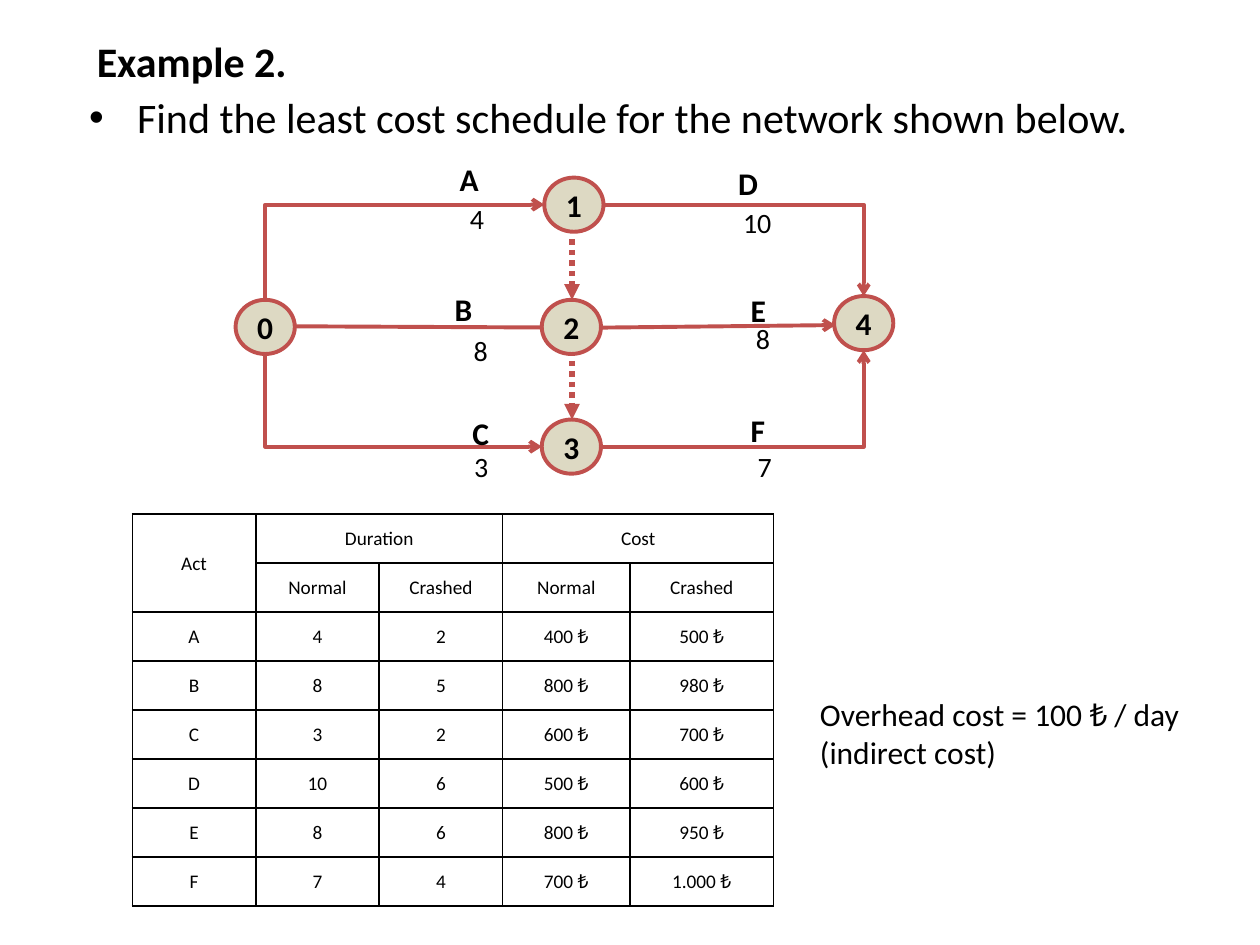
from dataclasses import dataclass

from lxml.etree import SubElement
from pptx import Presentation
from pptx.dml.color import RGBColor
from pptx.enum.dml import MSO_LINE
from pptx.enum.shapes import MSO_CONNECTOR as Link, MSO_SHAPE as Preset
from pptx.enum.text import MSO_ANCHOR as Anchor, PP_ALIGN as Align
from pptx.oxml.ns import qn
from pptx.util import Inches, Pt


@dataclass(frozen=True)
class Theme:
    font: str = "Calibri"
    ink: str = "000000"
    accent: str = "C0504D"
    node_fill: str = "DDD9C3"
    heading: int = 24
    label: int = 18
    duration: int = 16
    cell: int = 11
    solid: float = 2.25
    dotted: float = 3
    border: float = 1


@dataclass(frozen=True)
class Node:
    name: str
    left: float
    top: float


@dataclass(frozen=True)
class Activity:
    name: str
    duration: int
    crashed: int
    cost: str
    crashed_cost: str
    name_at: tuple[float, float]
    duration_at: tuple[float, float, float]  # left, top, width


@dataclass(frozen=True)
class Arrow:
    start: tuple[float, float]
    end: tuple[float, float]
    dotted: bool = False


@dataclass(frozen=True)
class Bend:
    """An arrow with one corner, between two sites on node outlines."""
    source: str
    source_site: int
    target: str
    target_site: int
    vertical_first: bool = False


THEME = Theme()
NODE_W, NODE_H = 0.47, 0.43
TOP, LEFT, BOTTOM, RIGHT = 0, 2, 4, 6  # connection sites of an ellipse
SITE_OFFSET = {TOP: (NODE_W / 2, 0), LEFT: (0, NODE_H / 2),
               BOTTOM: (NODE_W / 2, NODE_H), RIGHT: (NODE_W, NODE_H / 2)}

NODES = {n.name: n for n in (
    Node("0", 1.87, 2.38), Node("1", 4.32, 1.41), Node("2", 4.3, 2.38),
    Node("3", 4.3, 3.33), Node("4", 6.62, 2.35))}
ACTIVITIES = (
    Activity("A", 4, 2, "400 ₺", "500 ₺", (3.55, 1.22), (3.39, 1.55, 0.79)),
    Activity("B", 8, 5, "800 ₺", "980 ₺", (3.51, 2.25), (3.45, 2.6, 0.73)),
    Activity("C", 3, 2, "600 ₺", "700 ₺", (3.65, 3.24), (3.38, 3.52, 0.88)),
    Activity("D", 10, 6, "500 ₺", "600 ₺", (5.76, 1.25), (5.63, 1.58, 0.76)),
    Activity("E", 8, 6, "800 ₺", "950 ₺", (5.86, 2.26), (5.66, 2.5, 0.79)),
    Activity("F", 7, 4, "700 ₺", "1.000 ₺", (5.86, 3.21), (5.63, 3.52, 0.88)))
ARROWS = (
    Arrow((2.35, 2.59), (4.54, 2.6)), Arrow((4.78, 2.6), (6.63, 2.58)),
    Arrow((4.54, 1.9), (4.54, 2.38), True), Arrow((4.54, 2.78), (4.54, 3.33), True))
BENDS = (
    Bend("0", TOP, "1", LEFT, True), Bend("0", BOTTOM, "3", LEFT, True),
    Bend("1", RIGHT, "4", TOP), Bend("3", RIGHT, "4", BOTTOM))


def color(value: str) -> RGBColor:
    return RGBColor.from_string(value)


def write(frame, text: str, *, size: float, bold: bool = False, align=Align.LEFT) -> None:
    frame.text = text
    for paragraph in frame.paragraphs:
        paragraph.alignment = align
        font = paragraph.font
        for run in paragraph.runs:
            font = run.font
            font.name, font.size, font.bold = THEME.font, Pt(size), bold
            font.color.rgb = color(THEME.ink)


def add_text(slide, box: tuple[float, float, float, float], text: str, **style):
    frame = slide.shapes.add_textbox(*map(Inches, box)).text_frame
    frame.word_wrap = True
    write(frame, text, **style)
    return frame


def add_bullet(paragraph) -> None:
    props = paragraph._p.get_or_add_pPr()
    props.set("marL", str(Inches(0.38)))
    props.set("indent", str(-Inches(0.38)))
    SubElement(props, qn("a:buFont"), typeface="Arial")
    SubElement(props, qn("a:buChar"), char="•")


def add_line(slide, kind, start, end, head: str = "arrow", dotted: bool = False):
    connector = slide.shapes.add_connector(kind, *map(Inches, (*start, *end)))
    line = connector.line
    line.color.rgb = color(THEME.accent)
    line.width = Pt(THEME.dotted if dotted else THEME.solid)
    if dotted:
        line.dash_style = MSO_LINE.ROUND_DOT
    SubElement(line._get_or_add_ln(), qn("a:tailEnd"), type=head)
    SubElement(connector._element.spPr, qn("a:effectLst"))
    return connector


def site_point(node: Node, site: int) -> tuple[float, float]:
    dx, dy = SITE_OFFSET[site]
    return node.left + dx, node.top + dy


def add_bend(slide, bend: Bend, ovals: dict) -> None:
    """A vertical first leg is a horizontal one turned by a quarter."""
    start = x1, y1 = site_point(NODES[bend.source], bend.source_site)
    end = x2, y2 = site_point(NODES[bend.target], bend.target_site)
    if bend.vertical_first:
        cx, cy = (x1 + x2) / 2, (y1 + y2) / 2
        half_w = abs(y2 - y1) / 2
        half_h = (x2 - x1) / 2 * (1 if y2 > y1 else -1)
        start, end = (cx + half_w, cy - half_h), (cx - half_w, cy + half_h)
    connector = add_line(slide, Link.ELBOW, start, end)
    element = connector._element
    element.spPr.find(qn("a:prstGeom")).set("prst", "bentConnector2")
    if bend.vertical_first:
        degrees = 270 if y2 > y1 else 90
        element.spPr.find(qn("a:xfrm")).set("rot", str(degrees * 60000))
    joints = element.find(".//" + qn("p:cNvCxnSpPr"))
    for tag, name, site in (("a:stCxn", bend.source, bend.source_site),
                            ("a:endCxn", bend.target, bend.target_site)):
        SubElement(joints, qn(tag), id=str(ovals[name].shape_id), idx=str(site))


def add_node(slide, node: Node):
    oval = slide.shapes.add_shape(
        Preset.OVAL, *map(Inches, (node.left, node.top, NODE_W, NODE_H)))
    oval.shadow.inherit = False
    oval.fill.solid()
    oval.fill.fore_color.rgb = color(THEME.node_fill)
    oval.line.color.rgb = color(THEME.accent)
    oval.line.width = Pt(THEME.solid)
    oval.text_frame.vertical_anchor = Anchor.MIDDLE
    write(oval.text_frame, node.name, size=THEME.label, bold=True, align=Align.CENTER)
    return oval


def style_cell(cell, text: str) -> None:
    write(cell.text_frame, text, size=THEME.cell, align=Align.CENTER)
    cell.vertical_anchor = Anchor.MIDDLE
    cell.margin_left = cell.margin_right = cell.margin_top = Inches(0.01)
    cell.margin_bottom = 0
    props = cell._tc.get_or_add_tcPr()
    for side in ("a:lnL", "a:lnR", "a:lnT", "a:lnB"):
        border = SubElement(props, qn(side), w=str(Pt(THEME.border)))
        SubElement(SubElement(border, qn("a:solidFill")), qn("a:srgbClr"), val=THEME.ink)
    cell.fill.background()


def add_cost_table(slide) -> None:
    rows = [("Act", "Duration", "", "Cost", ""),
            ("", "Normal", "Crashed", "Normal", "Crashed")]
    rows += [(a.name, str(a.duration), str(a.crashed), a.cost, a.crashed_cost)
             for a in ACTIVITIES]
    widths = (0.98, 0.98, 0.98, 1.01, 1.14)
    table = slide.shapes.add_table(len(rows), len(widths), *map(
        Inches, (1.05, 4.08, sum(widths), 3.11))).table
    table.first_row = table.horz_banding = False
    for column, width in zip(table.columns, widths):
        column.width = Inches(width)
    for r, row in enumerate(rows):
        for c, text in enumerate(row):
            style_cell(table.cell(r, c), text)
    for first, last in (((0, 0), (1, 0)), ((0, 1), (0, 2)), ((0, 3), (0, 4))):
        table.cell(*first).merge(table.cell(*last))


def add_network(slide) -> None:
    for arrow in ARROWS:
        add_line(slide, Link.STRAIGHT, arrow.start, arrow.end,
                 "triangle" if arrow.dotted else "arrow", arrow.dotted)
    ovals = {name: add_node(slide, node) for name, node in NODES.items()}
    for bend in BENDS:
        add_bend(slide, bend, ovals)
    for activity in ACTIVITIES:
        add_text(slide, (*activity.name_at, 0.53, 0.4), activity.name,
                 size=THEME.label, bold=True)
        add_text(slide, (*activity.duration_at, 0.37), str(activity.duration),
                 size=THEME.duration, align=Align.CENTER)


def main() -> None:
    deck = Presentation()
    deck.slide_width, deck.slide_height = Inches(10), Inches(7.5)
    slide = deck.slides.add_slide(deck.slide_layouts[6])
    add_text(slide, (0.67, 0.23, 2.96, 0.5), "Example 2.", size=THEME.heading, bold=True)
    task = add_text(slide, (0.61, 0.68, 9, 4.95), size=THEME.heading,
                    text="Find the least cost schedule for the network shown below.")
    add_bullet(task.paragraphs[0])
    add_cost_table(slide)
    add_text(slide, (6.41, 5.47, 3.5, 1.01),
             "Overhead cost = 100 ₺ / day\n(indirect cost)", size=THEME.label)
    add_network(slide)
    deck.save("out.pptx")


if __name__ == "__main__":
    main()
